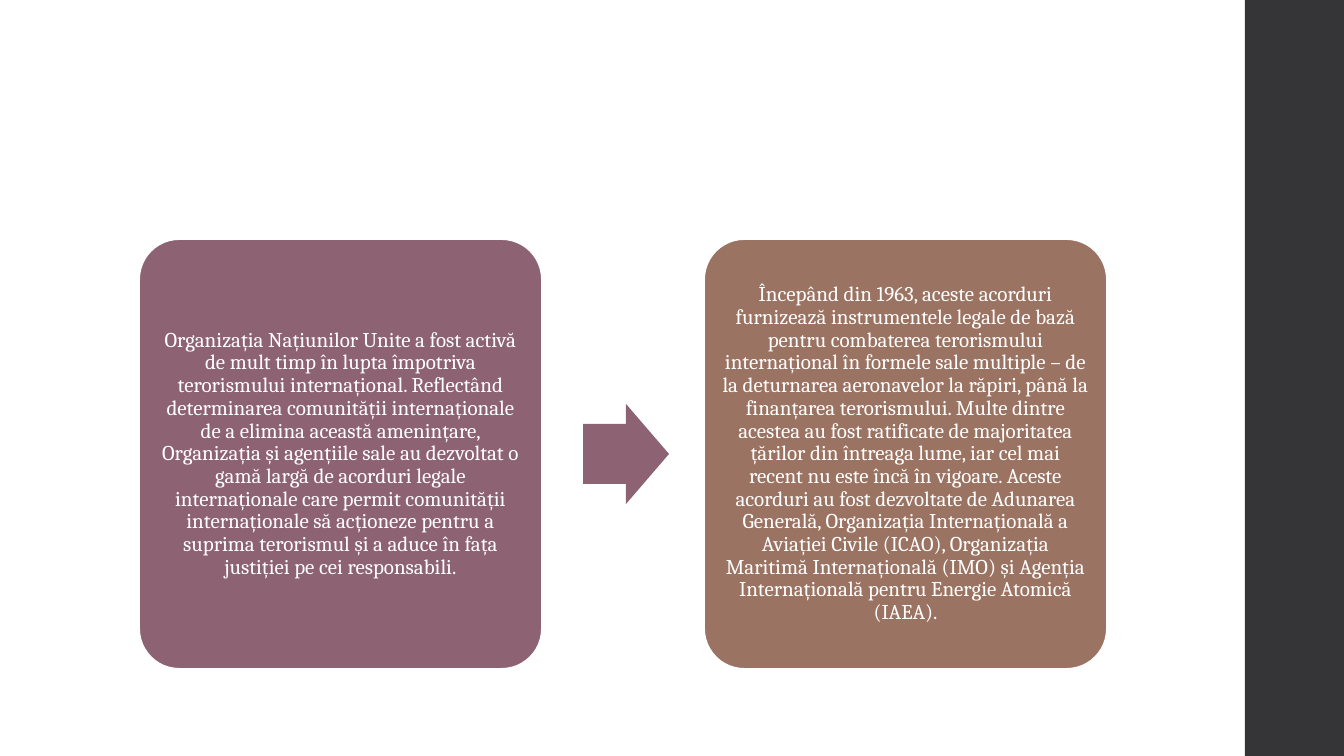
import pptx
import pptx.util
import pptx.dml.color
import pptx.enum.shapes
import pptx.enum.text

# Content
CARDS = [
    ("plum", "Organizația Națiunilor Unite a fost activă de mult timp în lupta împotriva "
     "terorismului internațional. Reflectând determinarea comunității internaționale de a "
     "elimina această amenințare, Organizația și agențiile sale au dezvoltat o gamă largă de "
     "acorduri legale internaționale care permit comunității internaționale să acționeze "
     "pentru a suprima terorismul și a aduce în fața justiției pe cei responsabili."),
    ("brown", "Începând din 1963, aceste acorduri furnizează instrumentele legale de bază "
     "pentru combaterea terorismului internațional în formele sale multiple – de la "
     "deturnarea aeronavelor la răpiri, până la finanțarea terorismului. Multe dintre "
     "acestea au fost ratificate de majoritatea țărilor din întreaga lume, iar cel mai "
     "recent nu este încă în vigoare. Aceste acorduri au fost dezvoltate de Adunarea "
     "Generală, Organizația Internațională a Aviației Civile (ICAO), Organizația Maritimă "
     "Internațională (IMO) și Agenția Internațională pentru Energie Atomică (IAEA)."),
]
COLORS = {"plum": "8D6374", "brown": "9B7362", "band": "353537", "white": "FFFFFF"}

# Geometry in px
SLIDE_WIDTH, SLIDE_HEIGHT = 1344, 756
BAND_LEFT = 1245
CARD_LEFT, CARD_TOP, CARD_WIDTH, CARD_HEIGHT = 139, 239, 403, 430
CARD_PITCH = 565
ARROW_LEFT, ARROW_WIDTH, ARROW_HEIGHT = 583, 86, 100
INSET = 6

SHAPES = pptx.enum.shapes.MSO_SHAPE


def px(length):
    return pptx.util.Emu(round(length * 914400 / 100.8))


def color(name):
    return pptx.dml.color.RGBColor.from_string(COLORS[name])


def set_format(target, values):
    for name, value in values.items():
        setattr(target, name, value)


def add_filled(slide, kind, box, fill, adjustments=()):
    shape = slide.shapes.add_shape(kind, *map(px, box))
    shape.shadow.inherit = False
    shape.fill.solid()
    shape.fill.fore_color.rgb = color(fill)
    shape.line.fill.background()
    for index, value in enumerate(adjustments):
        shape.adjustments[index] = value
    return shape


def add_card(slide, left, fill, text):
    box = (left, CARD_TOP, CARD_WIDTH, CARD_HEIGHT)
    card = add_filled(slide, SHAPES.ROUNDED_RECTANGLE, box, fill, [0.1])
    card.line.color.rgb = color("white")
    card.line.width = pptx.util.Pt(1.35)
    frame = card.text_frame
    set_format(frame, {
        "word_wrap": True,
        "vertical_anchor": pptx.enum.text.MSO_ANCHOR.MIDDLE,
        "margin_left": px(INSET), "margin_right": px(INSET),
        "margin_top": px(INSET), "margin_bottom": px(INSET),
    })
    paragraph = frame.paragraphs[0]
    set_format(paragraph, {"alignment": pptx.enum.text.PP_ALIGN.CENTER, "line_spacing": 0.9})
    run = paragraph.add_run()
    run.text = text
    set_format(run.font, {"name": "Cambria", "size": pptx.util.Pt(15)})
    run.font.color.rgb = color("white")


def main():
    presentation = pptx.Presentation()
    set_format(presentation, {"slide_width": px(SLIDE_WIDTH), "slide_height": px(SLIDE_HEIGHT)})
    slide = presentation.slides.add_slide(presentation.slide_layouts[6])

    # Dark band along the right edge
    add_filled(slide, SHAPES.RECTANGLE,
               (BAND_LEFT, 0, SLIDE_WIDTH - BAND_LEFT, SLIDE_HEIGHT), "band")

    # Text cards
    for index, (fill, text) in enumerate(CARDS):
        add_card(slide, CARD_LEFT + index * CARD_PITCH, fill, text)

    # Arrow, vertically centred on the cards
    arrow_top = CARD_TOP + (CARD_HEIGHT - ARROW_HEIGHT) // 2
    add_filled(slide, SHAPES.RIGHT_ARROW,
               (ARROW_LEFT, arrow_top, ARROW_WIDTH, ARROW_HEIGHT), "plum", [0.6, 0.5])

    presentation.save("out.pptx")


if __name__ == "__main__":
    main()
